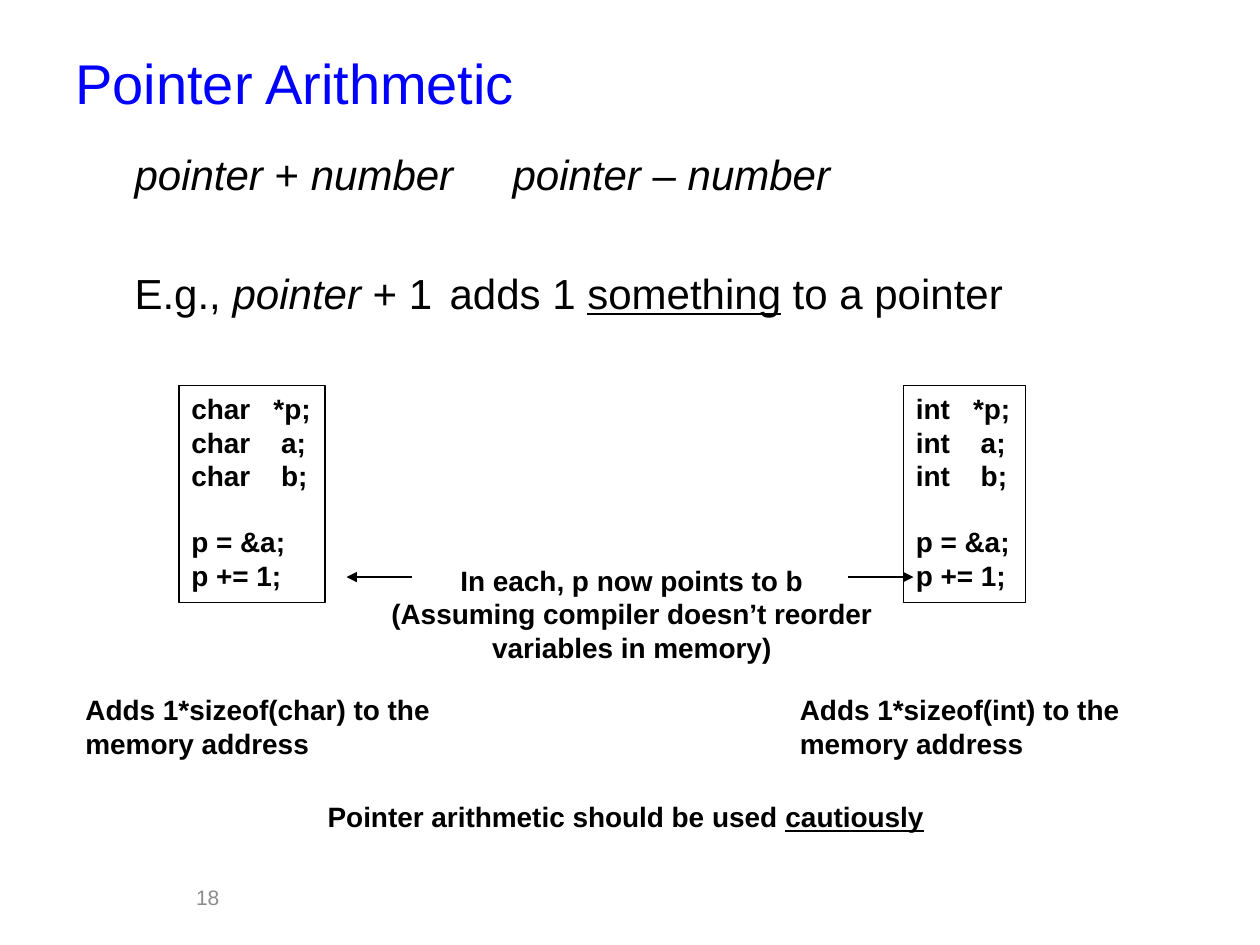
from dataclasses import dataclass

from lxml import etree
from pptx import Presentation
from pptx.dml.color import RGBColor
from pptx.enum import shapes, text
from pptx.oxml import ns
from pptx.util import Inches, Pt

BLACK, BLUE, GREY = "000000", "0000FF", "8C8C8C"
LINE_HEIGHT = 1.15


@dataclass
class Box:
    left: float
    top: float
    width: float
    height: float


@dataclass
class Span:
    wording: str
    italic: bool = False
    underline: bool = False


@dataclass
class Example:
    """One column: a code listing and the note on its pointer step."""
    type_name: str
    listing: Box
    note: Box


def colour(hex_value: str) -> RGBColor:
    return RGBColor.from_string(hex_value)


def style(font, size: float, hex_value: str = BLACK, bold: bool = False) -> None:
    font.name = "Arial"
    font.size = Pt(size)
    font.bold = bold
    font.color.rgb = colour(hex_value)


def format_frame(frame, size: float, hex_value: str = BLACK, bold: bool = False,
                 align=text.PP_ALIGN.LEFT) -> None:
    for paragraph in frame.paragraphs:
        paragraph.alignment = align
        for run in paragraph.runs:
            style(run.font, size, hex_value, bold)


def add_frame(slide, box: Box, wrap: bool = True, anchor=text.MSO_ANCHOR.TOP):
    area = slide.shapes.add_textbox(Inches(box.left), Inches(box.top),
                                    Inches(box.width), Inches(box.height))
    frame = area.text_frame
    frame.word_wrap = wrap
    frame.vertical_anchor = anchor
    return frame


def add_spans(paragraph, spans: list[Span]) -> None:
    for span in spans:
        run = paragraph.add_run()
        run.text = span.wording
        run.font.italic = span.italic
        run.font.underline = span.underline


def set_indent_and_tab(paragraph, stop: float) -> None:
    """Hang the first line at half an inch and set one tab stop."""
    properties = paragraph._p.get_or_add_pPr()
    properties.set("marL", str(Inches(1)))
    properties.set("indent", str(Inches(-0.5)))
    etree.SubElement(properties, ns.qn("a:buNone"))
    tabs = etree.SubElement(properties, ns.qn("a:tabLst"))
    etree.SubElement(tabs, ns.qn("a:tab"), pos=str(Inches(stop)), algn="l")


def add_expressions(slide) -> None:
    frame = add_frame(slide, Box(0.47, 1.08, 9, 1.71))
    frame.margin_top = Inches(0.1)
    operations, example = frame.paragraphs[0], frame.add_paragraph()
    set_indent_and_tab(operations, 5)
    set_indent_and_tab(example, 3.28)
    example.space_before = Pt(39)
    add_spans(operations, [Span("pointer", italic=True), Span(" + "),
                           Span("number\tpointer", italic=True), Span(" – "),
                           Span("number", italic=True)])
    add_spans(example, [Span("E.g., "), Span("pointer", italic=True),
                        Span(" + 1\tadds 1 "), Span("something", underline=True),
                        Span(" to a pointer")])
    format_frame(frame, 24)


def add_listing(slide, example: Example) -> None:
    box, kind = example.listing, example.type_name
    outline = slide.shapes.add_shape(shapes.MSO_SHAPE.RECTANGLE, Inches(box.left),
                                     Inches(box.top), Inches(box.width), Inches(box.height))
    outline.shadow.inherit = False
    outline.fill.background()
    outline.line.color.rgb = colour(BLACK)
    outline.line.width = Pt(0.75)
    frame = outline.text_frame
    frame.word_wrap = False
    frame.vertical_anchor = text.MSO_ANCHOR.TOP
    declarations = [f"{kind}   *p;", f"{kind}    a;", f"{kind}    b;"]
    statements = ["p = &a;", "p += 1;"]
    frame.text = "\n".join(declarations + statements)
    frame.paragraphs[len(declarations)].space_before = Pt(16 * LINE_HEIGHT)
    format_frame(frame, 16, bold=True)


def add_note(slide, box: Box, wording: str, align=text.PP_ALIGN.LEFT) -> None:
    frame = add_frame(slide, box)
    frame.text = wording
    format_frame(frame, 16, bold=True, align=align)


def add_arrow(slide, start: float, end: float, level: float) -> None:
    arrow = slide.shapes.add_connector(shapes.MSO_CONNECTOR.STRAIGHT, Inches(start),
                                       Inches(level), Inches(end), Inches(level))
    arrow.line.color.rgb = colour(BLACK)
    arrow.line.width = Pt(1.25)
    etree.SubElement(arrow.line._get_or_add_ln(), ns.qn("a:tailEnd"), type="triangle")
    etree.SubElement(arrow._element.spPr, ns.qn("a:effectLst"))


def main() -> None:
    deck = Presentation()
    deck.slide_width, deck.slide_height = Inches(10), Inches(7.5)
    slide = deck.slides.add_slide(deck.slide_layouts[6])

    title = add_frame(slide, Box(0.5, 0.3, 9, 0.7), anchor=text.MSO_ANCHOR.MIDDLE)
    title.text = "Pointer Arithmetic"
    format_frame(title, 32, BLUE)
    add_expressions(slide)

    examples = [
        Example("char", Box(1.42, 3.06, 1.16, 1.72), Box(0.58, 5.45, 3.16, 0.64)),
        Example("int", Box(7.17, 3.06, 0.97, 1.72), Box(6.25, 5.45, 3.06, 0.64)),
    ]
    for example in examples:
        add_listing(slide, example)
        add_note(slide, example.note,
                 f"Adds 1*sizeof({example.type_name}) to the memory address")

    add_note(slide, Box(2.95, 4.42, 4.13, 0.9),
             "In each, p now points to b\n"
             "(Assuming compiler doesn’t reorder variables in memory)",
             text.PP_ALIGN.CENTER)
    for start, end in ((3.27, 2.75), (6.73, 7.25)):
        add_arrow(slide, start, end, 4.58)

    warning = add_frame(slide, Box(2.47, 6.3, 4.99, 0.37), wrap=False)
    add_spans(warning.paragraphs[0], [Span("Pointer arithmetic should be used "),
                                      Span("cautiously", underline=True)])
    format_frame(warning, 16, bold=True, align=text.PP_ALIGN.CENTER)

    page_number = add_frame(slide, Box(0.67, 6.92, 1.17, 0.4), anchor=text.MSO_ANCHOR.MIDDLE)
    page_number.text = "18"
    format_frame(page_number, 12, GREY, align=text.PP_ALIGN.RIGHT)

    deck.save("out.pptx")


if __name__ == "__main__":
    main()
